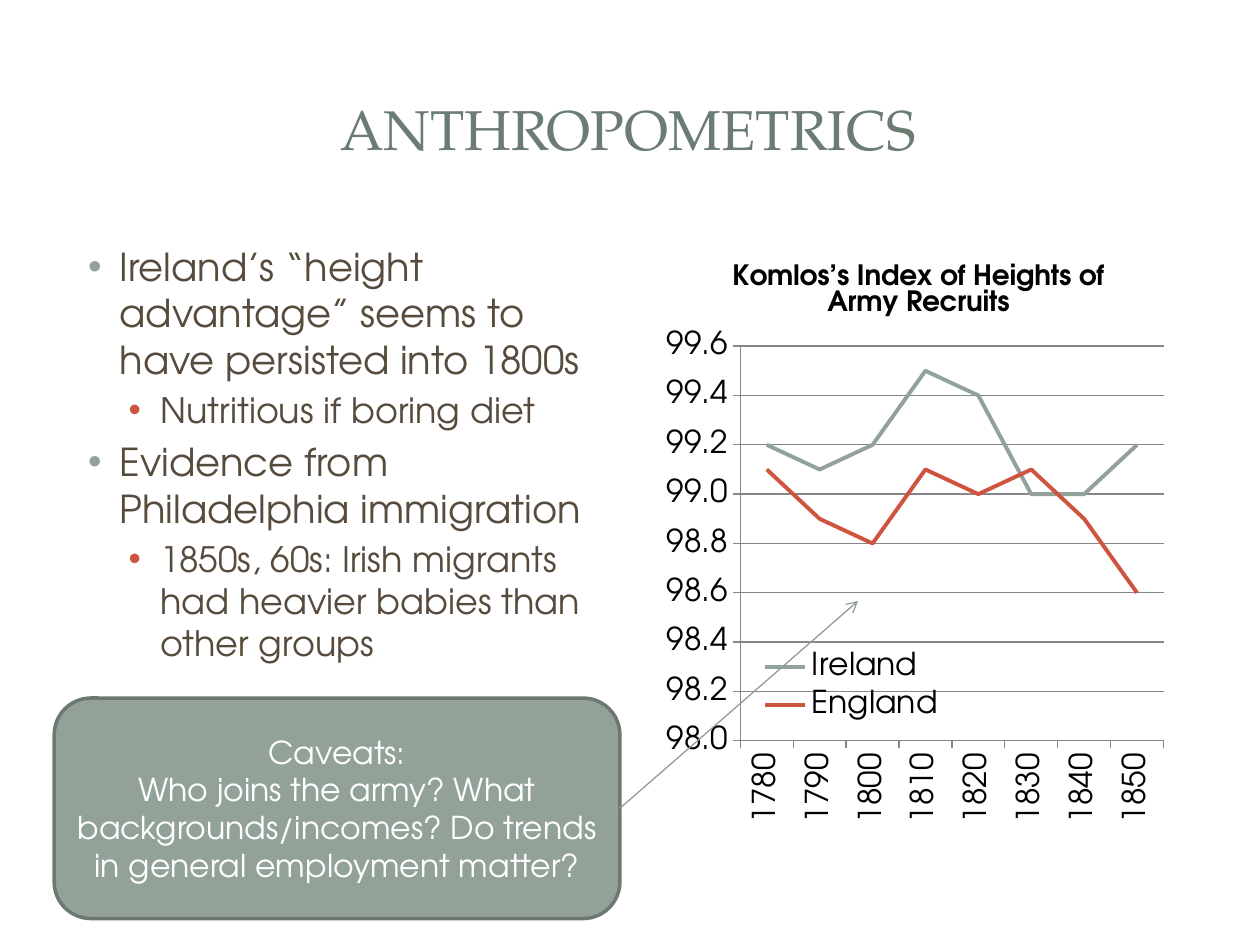
from lxml.etree import SubElement
from pptx import Presentation
from pptx.chart.data import CategoryChartData
from pptx.dml.color import RGBColor
from pptx.enum.chart import XL_CHART_TYPE, XL_LEGEND_POSITION, XL_MARKER_STYLE, XL_TICK_MARK
from pptx.enum.shapes import MSO_CONNECTOR, MSO_SHAPE
from pptx.enum.text import MSO_ANCHOR, MSO_AUTO_SIZE, PP_ALIGN
from pptx.oxml import parse_xml
from pptx.oxml.ns import nsdecls, qn
from pptx.util import Inches, Pt

COLORS = {"heading": "6B7D72", "body": "564B3C", "sage": "93A299", "red": "CF543F",
          "border": "6D7871", "arrow": "8F9F96", "grid": "868686",
          "black": "000000", "white": "FFFFFF"}
SANS, SERIF = "TeX Gyre Adventor", "TeX Gyre Pagella"
WIDTH, HEIGHT = 10, 7.5
MARGIN, COLUMN, CONTENT_TOP, CONTENT_HEIGHT = 0.47, 4.42, 1.88, 4.82
TITLE_BOX = (MARGIN, 0.45, 9.03, 1.14)
LIST_BOX = (MARGIN, CONTENT_TOP, COLUMN, CONTENT_HEIGHT)
CHART_BOX = (WIDTH - 0.5 - COLUMN, CONTENT_TOP, COLUMN, CONTENT_HEIGHT)
CAVEAT_BOX = (0.43, 5.54, 4.49, 1.75)
ARROW_TIP = (6.81, 4.77)

LEVELS = [{"size": 22, "indent": 0.38, "bullet": "sage"},
          {"size": 20, "indent": 0.7, "bullet": "red"}]
POINTS = [(0, "Ireland’s “height advantage” seems to have persisted into 1800s"),
          (1, "Nutritious if boring diet"),
          (0, "Evidence from Philadelphia immigration"),
          (1, "1850s, 60s: Irish migrants had heavier babies than other groups")]
CAVEATS = ["Caveats:",
           "Who joins the army? What backgrounds/incomes? Do trends in general employment matter?"]
DECADES = [str(year) for year in range(1780, 1860, 10)]
HEIGHTS = {"Ireland": ("sage", (99.2, 99.1, 99.2, 99.5, 99.4, 99.0, 99.0, 99.2)),
           "England": ("red", (99.1, 98.9, 98.8, 99.1, 99.0, 99.1, 98.9, 98.6))}


def rgb(name):
    """Return the named palette colour."""
    return RGBColor.from_string(COLORS[name])


def place(shape, box):
    """Move and size a shape to a box in inches."""
    shape.left, shape.top, shape.width, shape.height = map(Inches, box)


def style_font(font, size, color, face=SANS, bold=False):
    """Set the look of a font."""
    font.name, font.size, font.bold = face, Pt(size), bold
    font.color.rgb = rgb(color)


def write(para, text, align=PP_ALIGN.LEFT, before=0, **style):
    """Put one formatted run in a paragraph."""
    para.alignment, para.space_before = align, Pt(before)
    span = para.add_run()
    span.text = text
    style_font(span.font, **style)


def paragraphs(frame, count):
    """Return the given number of paragraphs of an empty text frame."""
    return [frame.paragraphs[0]] + [frame.add_paragraph() for _ in range(count - 1)]


def add_bullet(para, indent, color):
    """Give a paragraph a hanging coloured bullet."""
    properties = para._p.get_or_add_pPr()
    properties.set("marL", str(Inches(indent)))
    properties.set("indent", str(Inches(-0.25)))
    holder = SubElement(properties, qn("a:buClr"))
    SubElement(holder, qn("a:srgbClr")).set("val", COLORS[color])
    SubElement(properties, qn("a:buFont")).set("typeface", "Arial")
    SubElement(properties, qn("a:buChar")).set("char", "•")


def fill_title(title, box):
    """Place and write the heading."""
    place(title, box)
    frame = title.text_frame
    frame.vertical_anchor, frame.auto_size = MSO_ANCHOR.MIDDLE, MSO_AUTO_SIZE.NONE
    write(frame.paragraphs[0], "ANTHROPOMETRICS", align=PP_ALIGN.CENTER,
          size=32, color="heading", face=SERIF)


def fill_list(body, box):
    """Place and write the two-level list."""
    place(body, box)
    frame = body.text_frame
    frame.vertical_anchor, frame.auto_size = MSO_ANCHOR.TOP, MSO_AUTO_SIZE.NONE
    for para, (depth, text) in zip(paragraphs(frame, len(POINTS)), POINTS):
        level = LEVELS[depth]
        para.level = depth
        write(para, text, before=level["size"] * 0.2, size=level["size"], color="body")
        add_bullet(para, level["indent"], level["bullet"])


def set_layout(parent, position, target=None, **shares):
    """Fix a chart part at shares of the chart's size."""
    for old in parent.findall(qn("c:layout")):
        parent.remove(old)
    layout = parse_xml(f"<c:layout {nsdecls('c')}><c:manualLayout/></c:layout>")
    settings = {"layoutTarget": target} if target else {}
    settings.update(xMode="edge", yMode="edge", **shares)
    for tag, value in settings.items():
        SubElement(layout[0], qn(f"c:{tag}")).set("val", str(value))
    parent.insert(position, layout)


def style_axes(chart):
    """Format both axes and the gridlines."""
    decades, index = chart.category_axis, chart.value_axis
    index.minimum_scale, index.maximum_scale, index.major_unit = 98, 99.6, 0.2
    index.tick_labels.number_format = "#,##0.0"
    index.tick_labels.number_format_is_linked = False
    index.has_major_gridlines = True
    for axis in (decades, index):
        axis.major_tick_mark = XL_TICK_MARK.OUTSIDE
        style_font(axis.tick_labels.font, size=18, color="black")
    for line in (decades.format.line, index.format.line, index.major_gridlines.format.line):
        line.color.rgb, line.width = rgb("grid"), Pt(0.75)
    rotation = decades._element.find(qn("c:txPr")).find(qn("a:bodyPr"))
    rotation.set("rot", "-5400000")
    rotation.set("vert", "horz")


def add_heights_chart(page, box):
    """Add the line chart of recruits' heights."""
    data = CategoryChartData(number_format="#,##0.0")
    data.categories = DECADES
    for name, (_, values) in HEIGHTS.items():
        data.add_series(name, values)
    chart = page.shapes.add_chart(XL_CHART_TYPE.LINE, *map(Inches, box), data).chart
    style_font(chart.font, size=18, color="black")
    chart.has_title = True
    write(chart.chart_title.text_frame.paragraphs[0],
          "Komlos’s Index of Heights of Army Recruits",
          align=PP_ALIGN.CENTER, size=16, color="black", bold=True)
    chart.chart_title.include_in_layout = False
    chart.has_legend = True
    chart.legend.position = XL_LEGEND_POSITION.RIGHT
    chart.legend.include_in_layout = False
    style_font(chart.legend.font, size=18, color="black")
    style_axes(chart)
    plot = chart.plots[0]
    plot.vary_by_categories = False
    for series, (color, _) in zip(plot.series, HEIGHTS.values()):
        series.smooth = False
        series.marker.style = XL_MARKER_STYLE.NONE
        series.format.line.color.rgb, series.format.line.width = rgb(color), Pt(2.25)
    set_layout(chart._chartSpace.chart.plotArea, 0, "inner", x=0.18, y=0.18, w=0.76, h=0.65)
    set_layout(chart.legend._element, 1, x=0.2, y=0.67, w=0.36, h=0.14)


def add_caveats(page, box):
    """Add the rounded box of caveats."""
    card = page.shapes.add_shape(MSO_SHAPE.ROUNDED_RECTANGLE, *map(Inches, box))
    card.shadow.inherit = False
    card.fill.solid()
    card.fill.fore_color.rgb = rgb("sage")
    card.line.color.rgb, card.line.width = rgb("border"), Pt(2)
    frame = card.text_frame
    frame.word_wrap, frame.vertical_anchor = True, MSO_ANCHOR.MIDDLE
    for para, text in zip(paragraphs(frame, len(CAVEATS)), CAVEATS):
        write(para, text, align=PP_ALIGN.CENTER, size=18, color="white")


def add_arrow(page, box, tip):
    """Draw an arrow from the right edge of a box to a tip."""
    left, top, width, height = box
    start = (left + width, top + height / 2)
    arrow = page.shapes.add_connector(MSO_CONNECTOR.STRAIGHT, *map(Inches, start + tip))
    arrow.line.color.rgb, arrow.line.width = rgb("arrow"), Pt(0.75)
    SubElement(arrow.line._get_or_add_ln(), qn("a:tailEnd")).set("type", "arrow")
    SubElement(arrow._element.spPr, qn("a:effectLst"))


def main():
    """Build and save the slide."""
    deck = Presentation()
    deck.slide_width, deck.slide_height = Inches(WIDTH), Inches(HEIGHT)
    page = deck.slides.add_slide(deck.slide_layouts[1])
    fill_title(page.shapes.title, TITLE_BOX)
    fill_list(page.placeholders[1], LIST_BOX)
    add_heights_chart(page, CHART_BOX)
    add_caveats(page, CAVEAT_BOX)
    add_arrow(page, CAVEAT_BOX, ARROW_TIP)
    deck.save("out.pptx")


if __name__ == "__main__":
    main()
